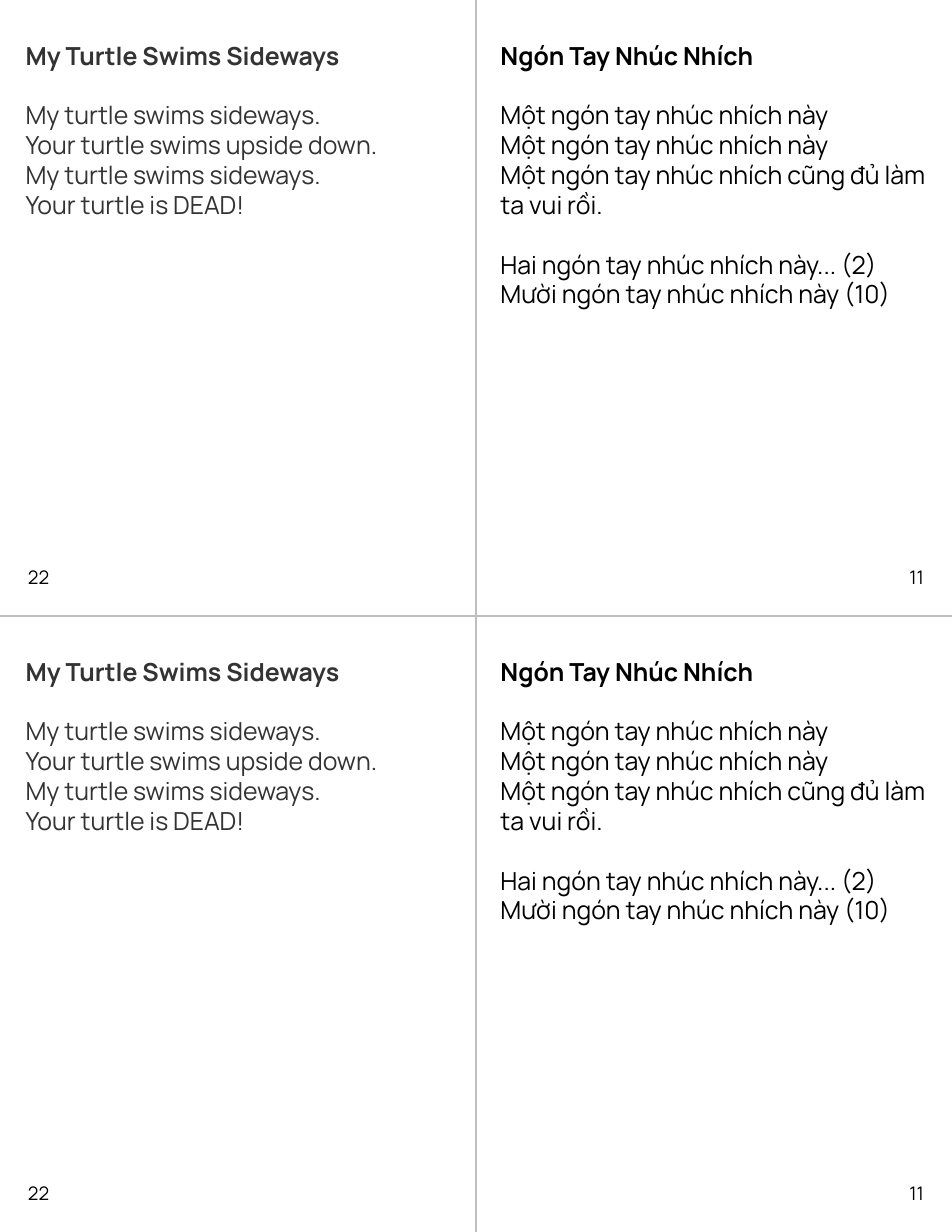
import pptx
import pptx.util
import pptx.dml.color
import pptx.enum.shapes
import pptx.enum.text
import pptx.oxml

Pt = pptx.util.Pt
ALIGN = pptx.enum.text.PP_ALIGN
ANCHOR = pptx.enum.text.MSO_ANCHOR

COLORS = {"black": "000000", "charcoal": "333333", "rule": "BFBFBF"}
FONT = "Manrope"
PAGE_WIDTH, PAGE_HEIGHT = 612, 792
CARD_WIDTH, CARD_HEIGHT = PAGE_WIDTH / 2, PAGE_HEIGHT / 2
LINE_HEIGHT = 19.2  # one line of 16 pt text, used as the gap between stanzas

TURTLE = {
    "title": "My Turtle Swims Sideways",
    "stanzas": [[
        "My turtle swims sideways.",
        "Your turtle swims upside down.",
        "My turtle swims sideways.",
        "Your turtle is DEAD!",
    ]],
    "color": "charcoal",
    "number": "22",
    "align": ALIGN.LEFT,
    "text_box": (9.36, 18.72, 296.64, 340.56),
    "number_left": 18,
}
FINGERS = {
    "title": "Ngón Tay Nhúc Nhích",
    "stanzas": [
        [
            "Một ngón tay nhúc nhích này",
            "Một ngón tay nhúc nhích này",
            "Một ngón tay nhúc nhích cũng đủ làm ta vui rồi.",
        ],
        [
            "Hai ngón tay nhúc nhích này... (2)",
            "Mười ngón tay nhúc nhích này (10)",
        ],
    ],
    "color": "black",
    "number": "11",
    "align": ALIGN.RIGHT,
    "text_box": (8.64, 18.72, 288.72, 359.28),
    "number_left": 252,
}


def add_text_frame(page, left, top, width, height, margin):
    box = page.shapes.add_textbox(Pt(left), Pt(top), Pt(width), Pt(height))
    frame = box.text_frame
    frame.word_wrap = True
    frame.margin_left = frame.margin_right = Pt(margin)
    frame.margin_top = frame.margin_bottom = Pt(margin)
    return frame


def write_line(para, text, size, color, bold=False):
    para.text = text
    for span in para.runs:
        span.font.name = FONT
        span.font.size = Pt(size)
        span.font.bold = bold
        span.font.color.rgb = pptx.dml.color.RGBColor.from_string(COLORS[color])


def add_card(page, left, top, poem):
    # Title and stanzas
    text_left, text_top, width, height = poem["text_box"]
    frame = add_text_frame(page, left + text_left, top + text_top, width, height, 7.2)
    write_line(frame.paragraphs[0], poem["title"], 16, poem["color"], bold=True)
    for stanza in poem["stanzas"]:
        for index, line in enumerate(stanza):
            para = frame.add_paragraph()
            write_line(para, line, 16, poem["color"])
            if index == 0:
                para.space_before = Pt(LINE_HEIGHT)

    # Page number
    frame = add_text_frame(page, left + poem["number_left"], top + 359.28, 36, 18.72, 0)
    frame.vertical_anchor = ANCHOR.BOTTOM
    write_line(frame.paragraphs[0], poem["number"], 12, "black")
    frame.paragraphs[0].alignment = poem["align"]


def add_cut_line(page, x1, y1, x2, y2):
    line = page.shapes.add_connector(
        pptx.enum.shapes.MSO_CONNECTOR.STRAIGHT, Pt(x1), Pt(y1), Pt(x2), Pt(y2))
    line.line.width = Pt(0.75)
    line.line.color.rgb = pptx.dml.color.RGBColor.from_string(COLORS["rule"])
    properties = line._element.spPr
    properties.append(properties.makeelement(pptx.oxml.ns.qn("a:effectLst"), {}))


def main():
    deck = pptx.Presentation()
    deck.slide_width, deck.slide_height = Pt(PAGE_WIDTH), Pt(PAGE_HEIGHT)
    page = deck.slides.add_slide(deck.slide_layouts[6])

    # Cut lines between the four cards
    add_cut_line(page, CARD_WIDTH, 0, CARD_WIDTH, PAGE_HEIGHT)
    add_cut_line(page, 0, CARD_HEIGHT, PAGE_WIDTH, CARD_HEIGHT)

    # The same pair of cards on each row
    for row in range(2):
        for column, poem in enumerate((TURTLE, FINGERS)):
            add_card(page, column * CARD_WIDTH, row * CARD_HEIGHT, poem)

    deck.save("out.pptx")


if __name__ == "__main__":
    main()
